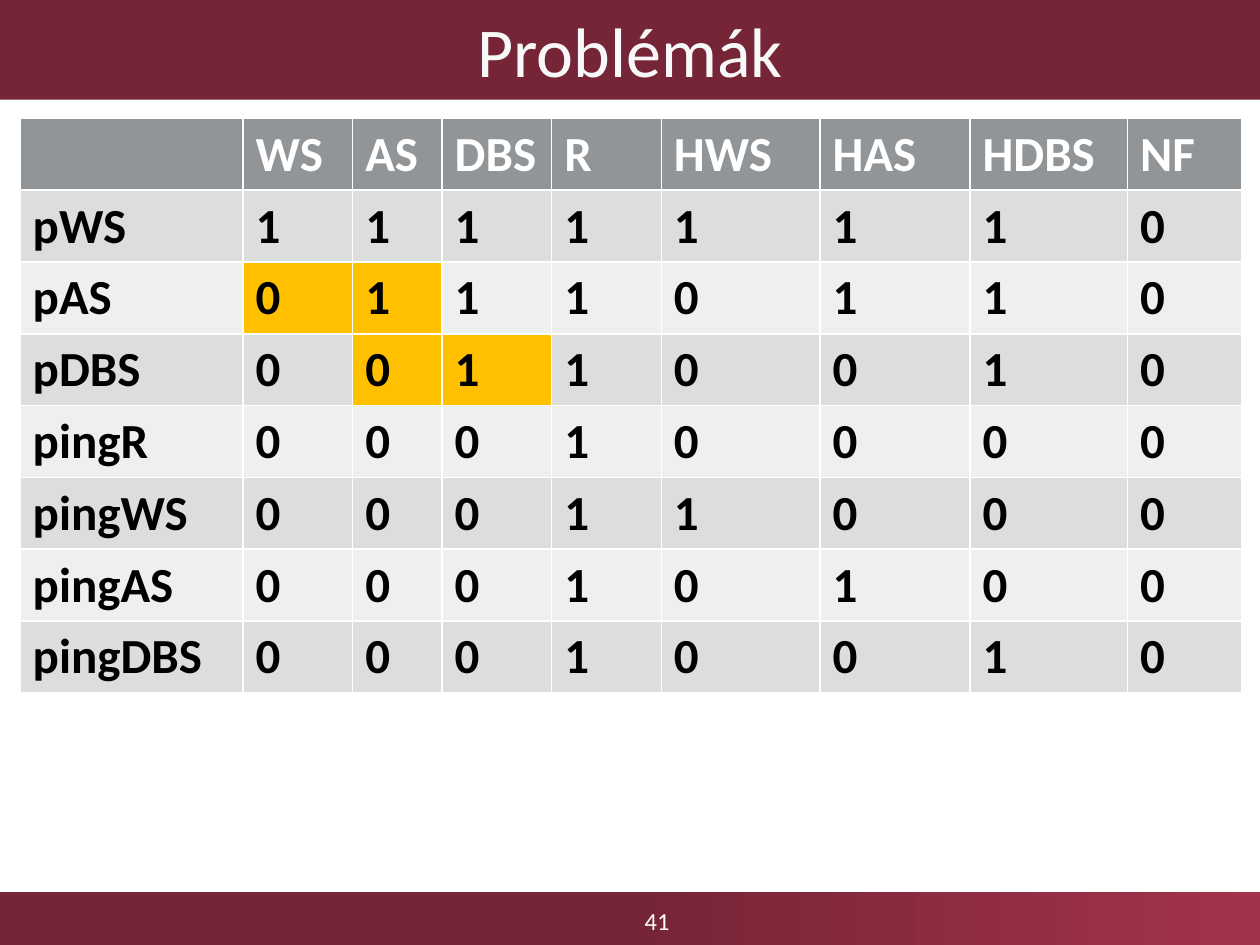
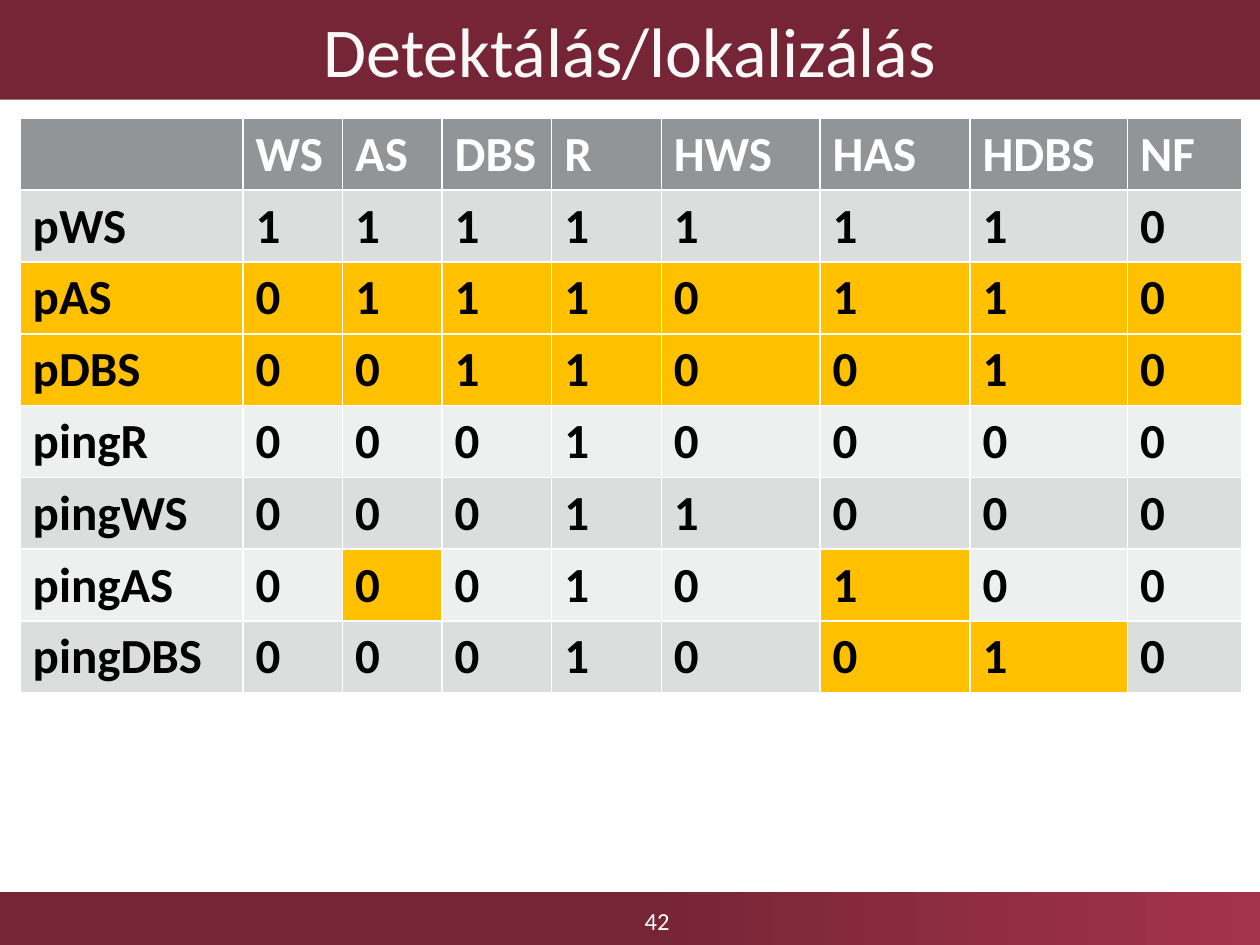
from itertools import product

from pptx import Presentation
from pptx import util as u
from pptx.dml.color import RGBColor
from pptx.enum import shapes, text

FONT = "Calibri"
COLORS = {
    "burgundy": "762536", "crimson": "A3334B", "title": "F8F8F8",
    "header": "929598", "odd": "DCDDDD", "even": "EEEFEF", "marked": "FFC000",
    "white": "FFFFFF", "black": "000000",
}

FAULTS = ["WS", "AS", "DBS", "R", "HWS", "HAS", "HDBS", "NF"]
PROBES = {
    "pWS": "11111110",
    "pAS": "01110110",
    "pDBS": "00110010",
    "pingR": "00010000",
    "pingWS": "00011000",
    "pingAS": "00010100",
    "pingDBS": "00010010",
}
FIRST_PAGE = 41
# Marked cells are (probe, column); the probe's own name stands in column "".
SLIDES = [
    {
        "title": "Problémák",
        "ws_as_widths": [0.87, 0.71],
        "marked": [("pAS", "WS"), ("pAS", "AS"), ("pDBS", "AS"), ("pDBS", "DBS")],
    },
    {
        "title": "Detektálás/lokalizálás",
        "ws_as_widths": [0.79, 0.79],
        "marked": [
            *product(["pAS", "pDBS"], ["", *FAULTS]),
            ("pingAS", "AS"), ("pingAS", "HAS"),
            ("pingDBS", "HAS"), ("pingDBS", "HDBS"),
        ],
    },
]

PROBE_WIDTH = 1.77
OTHER_WIDTHS = [0.87, 0.87, 1.26, 1.19, 1.25, 0.91]
ROW_HEIGHT = 0.57


def rgb(color):
    return RGBColor.from_string(COLORS[color])


def inches(*lengths):
    return [u.Inches(length) for length in lengths]


def style_text(frame, size, color, bold=False, align=None):
    for paragraph in frame.paragraphs:
        paragraph.alignment = align
        for run in paragraph.runs:
            run.font.name = FONT
            run.font.size = u.Pt(size)
            run.font.bold = bold
            run.font.color.rgb = rgb(color)


def add_title(slide, wording):
    title = slide.shapes.title
    title.left, title.top, title.width, title.height = inches(0, 0, 10, 0.79)
    title.fill.solid()
    title.fill.fore_color.rgb = rgb("burgundy")
    frame = title.text_frame
    frame.text = wording
    frame.auto_size = text.MSO_AUTO_SIZE.NONE
    frame.vertical_anchor = text.MSO_ANCHOR.MIDDLE
    style_text(frame, 40, "title", align=text.PP_ALIGN.CENTER)


def add_footer(slide, page):
    band = slide.shapes.add_shape(
        shapes.MSO_SHAPE.RECTANGLE, *inches(0, 7.08, 10, 0.42))
    band.shadow.inherit = False
    band.line.fill.background()
    band.fill.gradient()
    band.fill.gradient_angle = 0
    for stop, position, color in zip(
            band.fill.gradient_stops, (0.5, 1), ("burgundy", "crimson")):
        stop.position = position
        stop.color.rgb = rgb(color)

    page_number = slide.shapes.add_textbox(*inches(3.59, 7.11, 3.25, 0.39))
    frame = page_number.text_frame
    frame.text = str(page)
    frame.word_wrap = True
    frame.vertical_anchor = text.MSO_ANCHOR.MIDDLE
    style_text(frame, 14, "white", align=text.PP_ALIGN.CENTER)


def add_fault_matrix(slide, ws_as_widths, marked):
    header = ["", *FAULTS]
    rows = [header] + [[probe, *results] for probe, results in PROBES.items()]
    widths = [PROBE_WIDTH, *ws_as_widths, *OTHER_WIDTHS]
    matrix = slide.shapes.add_table(
        len(rows), len(header),
        *inches(0.16, 0.94, sum(widths), ROW_HEIGHT * len(rows))).table
    for column, width in zip(matrix.columns, widths):
        column.width = u.Inches(width)

    for r, row in enumerate(rows):
        for c, value in enumerate(row):
            if r == 0:
                fill = "header"
            elif (row[0], header[c]) in marked:
                fill = "marked"
            else:
                fill = "odd" if r % 2 else "even"
            cell = matrix.cell(r, c)
            cell.text = value
            cell.fill.solid()
            cell.fill.fore_color.rgb = rgb(fill)
            style_text(cell.text_frame, 28, "black" if r else "white", bold=True)


def main():
    prs = Presentation()
    prs.slide_width, prs.slide_height = inches(10, 7.5)
    title_only = prs.slide_layouts[5]
    for page, content in enumerate(SLIDES, FIRST_PAGE):
        slide = prs.slides.add_slide(title_only)
        add_footer(slide, page)
        add_title(slide, content["title"])
        add_fault_matrix(slide, content["ws_as_widths"], content["marked"])
    prs.save("out.pptx")


if __name__ == "__main__":
    main()
